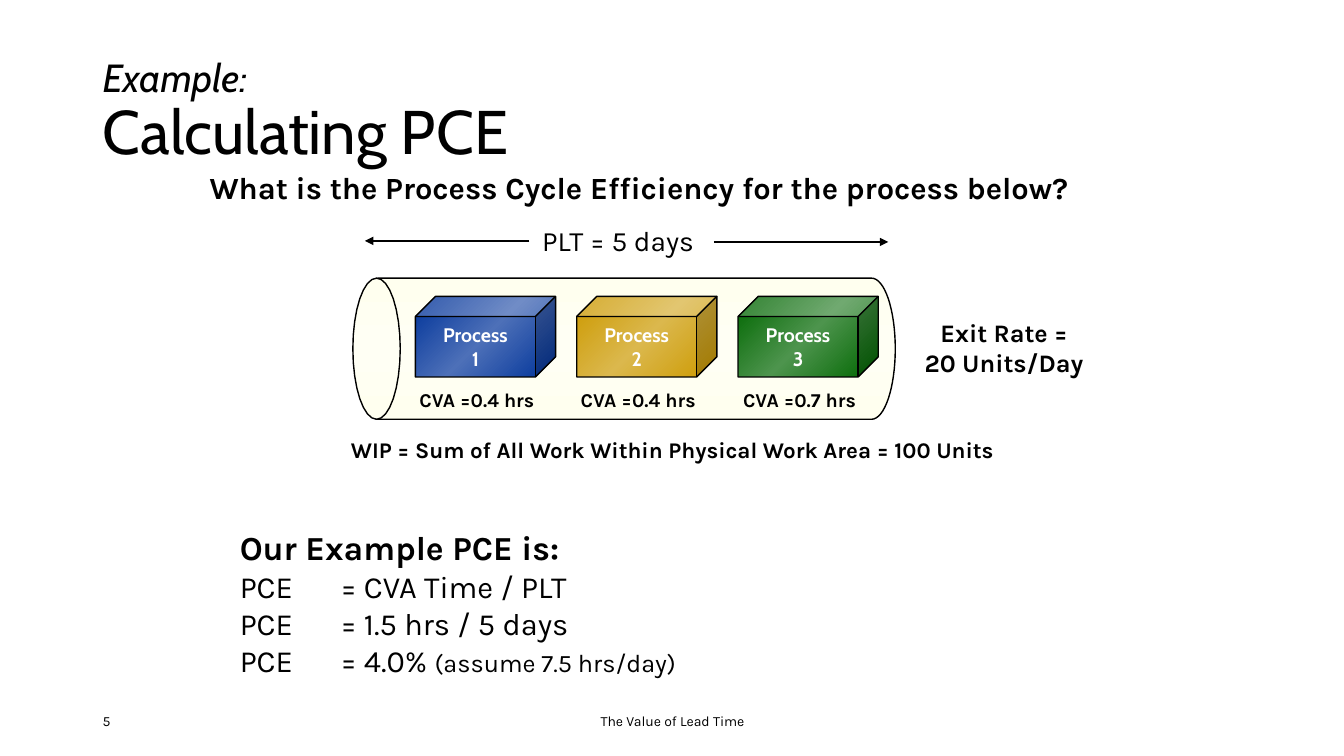
from copy import deepcopy
from math import cos, pi, sin

from pptx import Presentation
from pptx import util as u
from pptx.dml.color import RGBColor
from pptx.enum import shapes, text
from pptx.oxml import parse_xml
from pptx.oxml.ns import nsdecls, qn

COLORS = {
    "ink": "000000", "paper": "FFFFFF",
    "pipe": "FFFFEF", "pipe_light": "FFFFF4",
    "blue": "003399", "blue_light": "4D70B8",
    "gold": "CC9900", "gold_light": "DBB84D",
    "green": "006600", "green_light": "4D944D",
}
PROCESSES = [("1", "0.4", "blue"), ("2", "0.4", "gold"), ("3", "0.7", "green")]
CENTER = text.PP_ALIGN.CENTER
MIDDLE = text.MSO_ANCHOR.MIDDLE


def rgb(name):
    return RGBColor.from_string(COLORS[name])


def inches(*lengths):
    return [u.Inches(length) for length in lengths]


def write(frame, paragraphs, size, color="ink", align=None, anchor=None,
          wrap=True, spacing=None, **font):
    frame.word_wrap = wrap
    frame.vertical_anchor = anchor or text.MSO_ANCHOR.TOP
    for index, runs in enumerate(paragraphs):
        line = frame.paragraphs[0] if index == 0 else frame.add_paragraph()
        line.alignment = align
        line.line_spacing = spacing
        for words, changes in runs:
            run = line.add_run()
            run.text = words
            run.font.color.rgb = rgb(color)
            formats = {"name": "Karla", "size": size, **font, **changes}
            formats["size"] = u.Pt(formats["size"])
            for key, value in formats.items():
                setattr(run.font, key, value)


def label(slide, box, lines, size, **formats):
    frame = slide.shapes.add_textbox(*inches(*box)).text_frame
    write(frame, [[(line, {})] for line in lines], size, **formats)


def outline(shape):
    shape.shadow.inherit = False
    shape.line.color.rgb = rgb("ink")
    shape.line.width = u.Pt(1)


def shade(shape, color, angle):
    shape.fill.gradient()
    shape.fill.gradient_angle = 360 - angle
    first = shape.fill._fill._gradFill.find(qn("a:gsLst"))[0]
    first.addnext(deepcopy(first))
    for stop, (position, name) in zip(
            shape.fill.gradient_stops,
            [(0, color), (0.5, color + "_light"), (1, color)]):
        stop.position = position
        stop.color.rgb = rgb(name)


def arc(center_x, center_y, radius_x, radius_y, start, end):
    steps = 32
    angles = [start + (end - start) * step / steps for step in range(steps + 1)]
    return [inches(center_x + radius_x * cos(angle), center_y + radius_y * sin(angle))
            for angle in angles]


def closed_outline(slide, points):
    builder = slide.shapes.build_freeform(*points[0])
    builder.add_line_segments(points[1:], close=True)
    part = builder.convert_to_shape()
    outline(part)
    shade(part, "pipe", 90)


def pipe(slide, left, top, width, height):
    radius_x, radius_y = 0.235, height / 2
    middle = top + radius_y
    near, far = left + radius_x, left + width - radius_x
    closed_outline(slide,
                   arc(near + 0.02, middle, radius_x, radius_y, pi / 2, 3 * pi / 2)
                   + arc(far, middle, radius_x, radius_y, -pi / 2, pi / 2))
    closed_outline(slide, arc(near, middle, radius_x, radius_y, 0, 2 * pi))


def process(slide, left, top, width, height, number, hours, color):
    label(slide, (left - 0.3, top + 0.86, 1.82, 0.33), [f"CVA ={hours} hrs"], 14,
          align=CENTER, bold=True)
    cube = slide.shapes.add_shape(shapes.MSO_SHAPE.CUBE,
                                  *inches(left, top, width, height))
    outline(cube)
    shade(cube, color, 45)
    write(cube.text_frame, [[("Process", {})], [(number, {})]], 14, "paper",
          align=CENTER, anchor=MIDDLE, wrap=False, name="Cabin", bold=True)


def arrow(slide, start_x, end_x, y):
    span = slide.shapes.add_connector(shapes.MSO_CONNECTOR.STRAIGHT,
                                      *inches(start_x, y, end_x, y))
    span.line.color.rgb = rgb("ink")
    span.line.width = u.Pt(1)
    span.line._get_or_add_ln().append(
        parse_xml(f'<a:tailEnd {nsdecls("a")} type="triangle"/>'))
    span._element.spPr.append(parse_xml(f'<a:effectLst {nsdecls("a")}/>'))


def heading(slide, left, top, width, height):
    frame = slide.shapes.add_textbox(*inches(left, top, width, height)).text_frame
    write(frame, [[("Example: ", {"size": 28, "italic": True})],
                  [("Calculating PCE", {})]], 44,
          anchor=MIDDLE, spacing=0.9, name="Cabin")
    label(slide, (left + 1.06, top + 1.22, 9.31, 0.47),
          ["What is the Process Cycle Efficiency for the process below?"], 22,
          bold=True)


def process_flow(slide, left, top, width, height):
    pipe(slide, left, top, width, height)
    label(slide, (left + 1.72, top - 0.59, 1.82, 0.43), ["PLT = 5 days"], 20,
          align=CENTER)
    label(slide, (left + 5.52, top + 0.34, 1.94, 0.7),
          ["Exit Rate = ", "20 Units/Day "], 18, align=CENTER, bold=True)
    arrow(slide, left + 1.75, left + 0.12, top - 0.37)
    arrow(slide, left + 3.58, left + 5.31, top - 0.36)
    label(slide, (left - 0.44, top + 1.52, 7.22, 0.64),
          ["WIP = Sum of All Work Within Physical Work Area = 100 Units"], 16,
          align=CENTER, bold=True)
    for index, details in enumerate(PROCESSES):
        process(slide, left + 0.62 + 1.6 * index, top + 0.18, 1.39, 0.8, *details)


def answer(slide, left, top, width, height):
    frame = slide.shapes.add_textbox(*inches(left, top, width, height)).text_frame
    write(frame, [
        [("Our Example PCE is:", {"size": 24, "bold": True})],
        [("PCE\t= CVA Time / PLT", {})],
        [("PCE\t= 1.5 hrs / 5 days", {})],
        [("PCE\t= 4.0% ", {}), ("(assume 7.5 hrs/day)", {"size": 18})],
    ], 22)


def footer(slide, left, top, width, height):
    label(slide, (left, top, 3, height), ["5"], 10, anchor=MIDDLE)
    label(slide, (left + 3.5, top, 4.5, height), ["The Value of Lead Time"], 10,
          align=CENTER, anchor=MIDDLE)


def main():
    deck = Presentation()
    deck.slide_width, deck.slide_height = inches(13.33, 7.5)
    slide = deck.slides.add_slide(deck.slide_layouts[6])
    footer(slide, 0.92, 6.95, 11.5, 0.4)
    heading(slide, 0.92, 0.4, 11.5, 1.45)
    process_flow(slide, 3.5, 2.76, 5.38, 1.4)
    answer(slide, 2.28, 5.18, 7.5, 1.61)
    deck.save("out.pptx")


if __name__ == "__main__":
    main()
